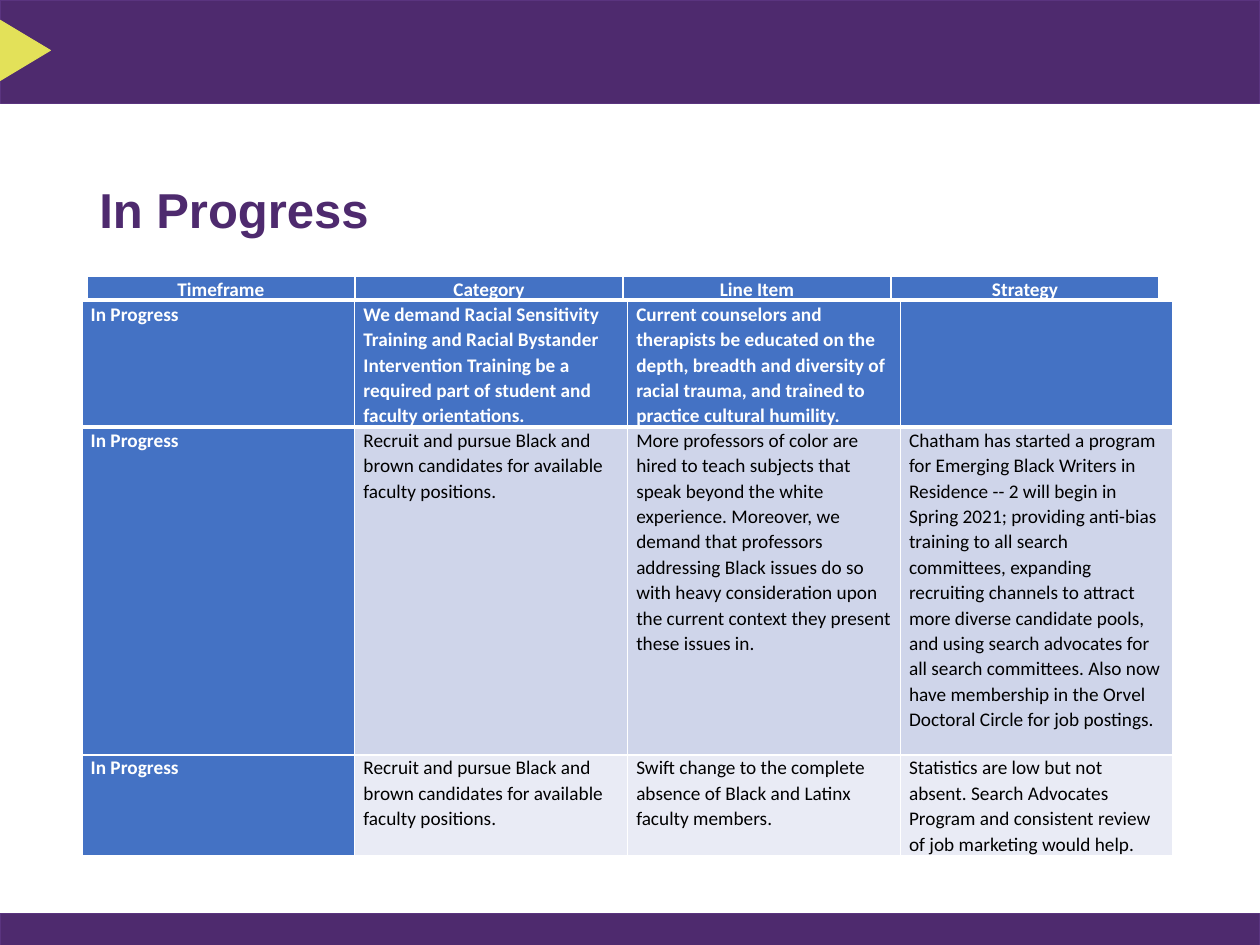
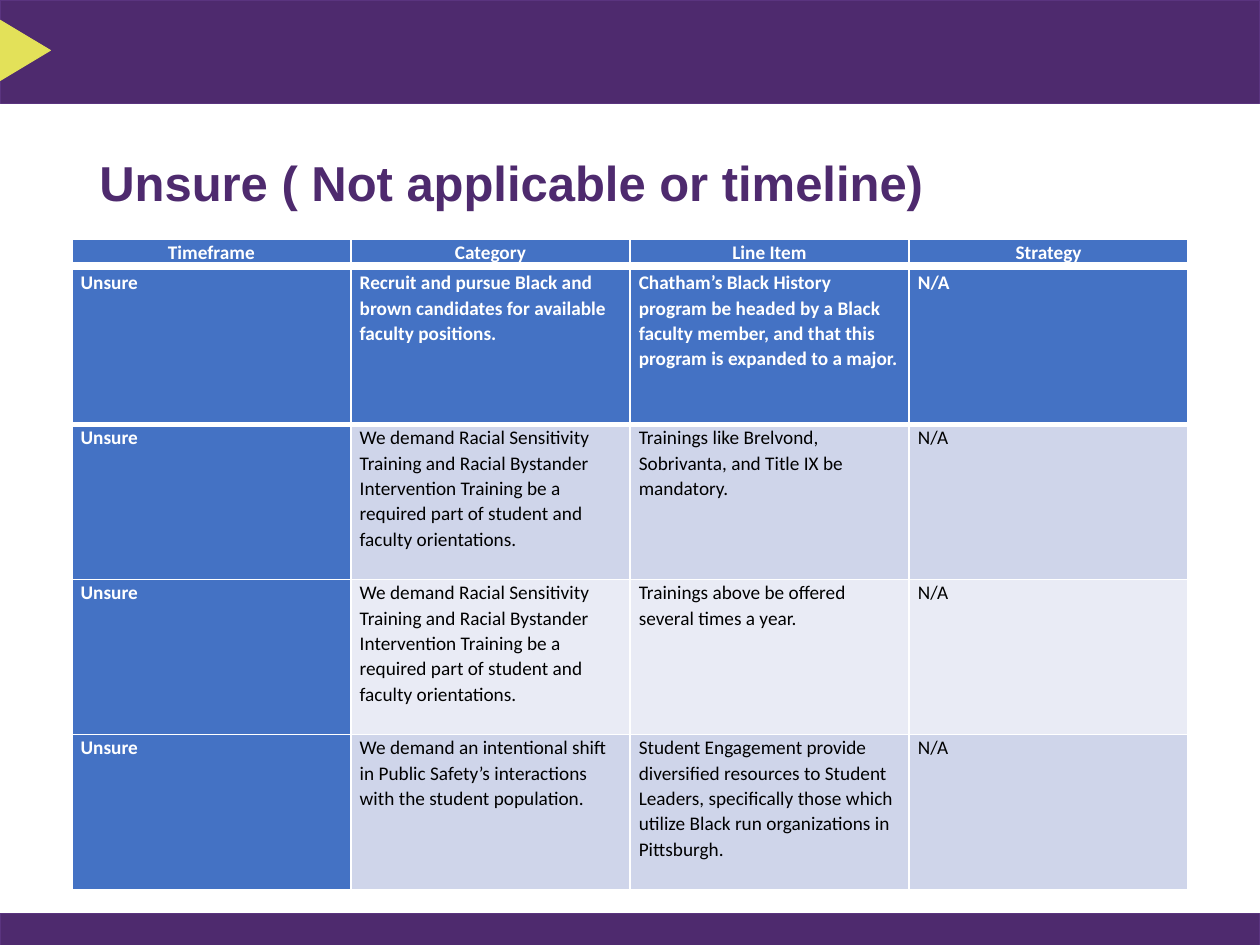
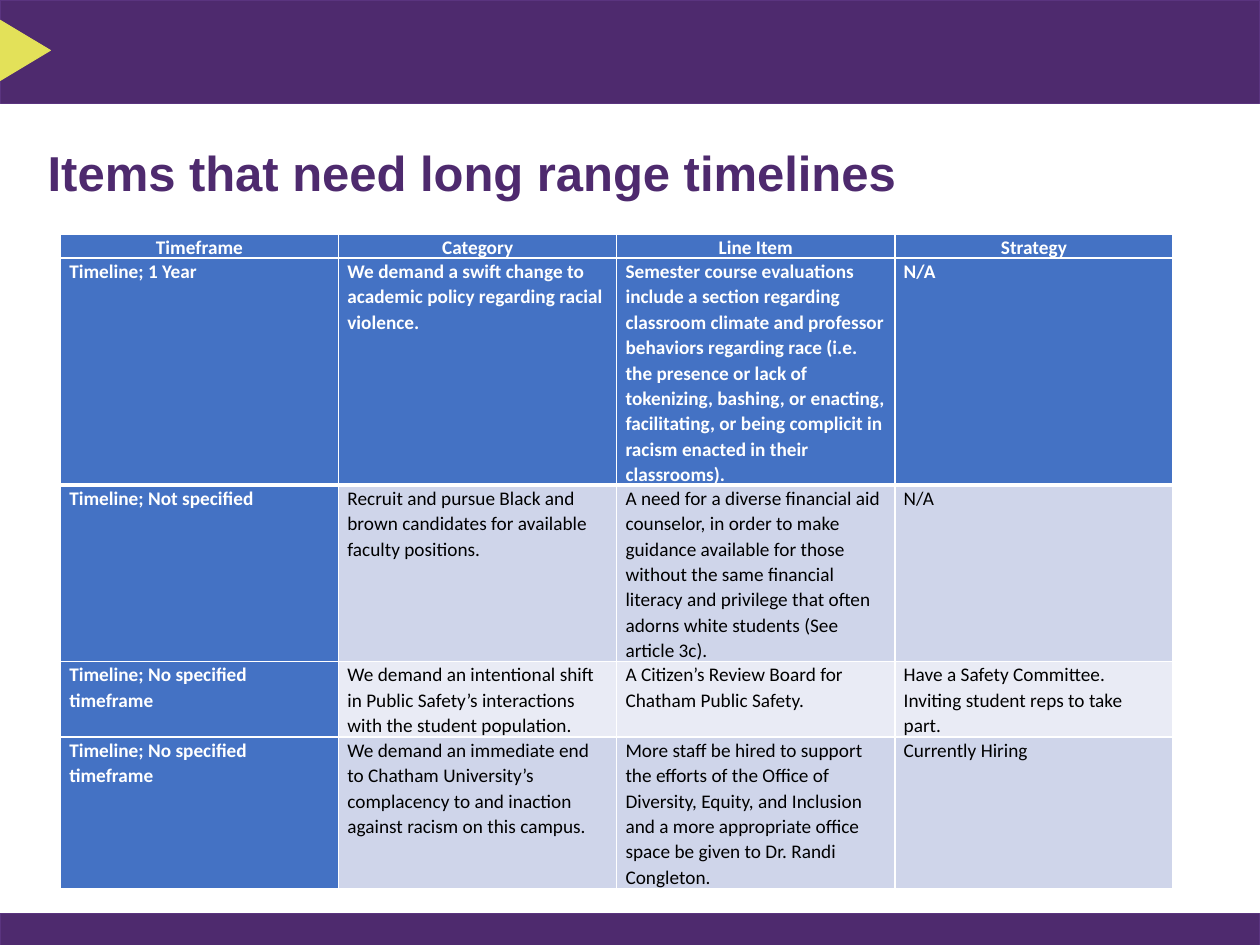
from lxml import etree
from pptx import Presentation
from pptx import util as u
from pptx.dml.color import RGBColor
from pptx.enum import shapes, text
from pptx.oxml.ns import qn

PURPLE = RGBColor(0x4E, 0x2A, 0x6E)
EDGE = RGBColor(0x5A, 0x34, 0x7F)
LIME = RGBColor(0xE3, 0xE1, 0x59)
BLUE = RGBColor(0x44, 0x72, 0xC4)
TINTS = RGBColor(0xCF, 0xD5, 0xEA), RGBColor(0xE9, 0xEB, 0xF5)
WHITE = RGBColor(0xFF, 0xFF, 0xFF)
BLACK = RGBColor(0, 0, 0)

WIDTH, HEIGHT = 10, 7.5
LINE = 0.2  # height of one line of table text
HEADS = ["Timeframe", "Category", "Line Item", "Strategy"]

RECRUIT = ("Recruit and pursue Black and brown candidates for available "
           "faculty positions.")
TRAIN = ("We demand Racial Sensitivity Training and Racial Bystander "
         "Intervention Training be a required part of student and faculty "
         "orientations.")
SAFETY = ("We demand an intentional shift in Public Safety’s interactions "
          "with the student population.")

PROGRESS = [
    ["In Progress", TRAIN,
     "Current counselors and therapists be educated on the depth, breadth and "
     "diversity of racial trauma, and trained to practice cultural humility.",
     ""],
    ["In Progress", RECRUIT,
     "More professors of color are hired to teach subjects that speak beyond "
     "the white experience. Moreover, we demand that professors addressing "
     "Black issues do so with heavy consideration upon the current context "
     "they present these issues in.",
     "Chatham has started a program for Emerging Black Writers in Residence "
     "-- 2 will begin in Spring 2021; providing anti-bias training to all "
     "search committees, expanding recruiting channels to attract more "
     "diverse candidate pools, and using search advocates for all search "
     "committees. Also now have membership in the Orvel Doctoral Circle for "
     "job postings."],
    ["In Progress", RECRUIT,
     "Swift change to the complete absence of Black and Latinx faculty "
     "members.",
     "Statistics are low but not absent. Search Advocates Program and "
     "consistent review of job marketing would help."],
]
UNSURE = [
    ["Unsure", RECRUIT,
     "Chatham’s Black History program be headed by a Black faculty member, "
     "and that this program is expanded to a major.", "N/A"],
    ["Unsure", TRAIN,
     "Trainings like Brelvond, Sobrivanta, and Title IX be mandatory.", "N/A"],
    ["Unsure", TRAIN,
     "Trainings above be offered several times a year.", "N/A"],
    ["Unsure", SAFETY,
     "Student Engagement provide diversified resources to Student Leaders, "
     "specifically those which utilize Black run organizations in "
     "Pittsburgh.", "N/A"],
]
LONG = [
    ["Timeline; 1 Year",
     "We demand a swift change to academic policy regarding racial violence.",
     "Semester course evaluations include a section regarding classroom "
     "climate and professor behaviors regarding race (i.e. the presence or "
     "lack of tokenizing, bashing, or enacting, facilitating, or being "
     "complicit in racism enacted in their classrooms).", "N/A"],
    ["Timeline; Not specified", RECRUIT,
     "A need for a diverse financial aid counselor, in order to make guidance "
     "available for those without the same financial literacy and privilege "
     "that often adorns white students (See article 3c).", "N/A"],
    ["Timeline; No specified timeframe", SAFETY,
     "A Citizen’s Review Board for Chatham Public Safety.",
     "Have a Safety Committee. Inviting student reps to take part."],
    ["Timeline; No specified timeframe",
     "We demand an immediate end to Chatham University’s complacency to and "
     "inaction against racism on this campus.",
     "More staff be hired to support the efforts of the Office of Diversity, "
     "Equity, and Inclusion and a more appropriate office space be given to "
     "Dr. Randi Congleton.", "Currently Hiring"],
]


def inches(*sizes):
    return [u.Inches(size) for size in sizes]


def add_block(slide, kind, place, fill, edge):
    block = slide.shapes.add_shape(kind, *inches(*place))
    block.shadow.inherit = False
    block.fill.solid()
    block.fill.fore_color.rgb = fill
    block.line.color.rgb = edge
    block.line.width = u.Pt(0.5)
    return block


def add_bands(slide):
    kind = shapes.MSO_SHAPE
    add_block(slide, kind.RECTANGLE, (0, 0, WIDTH, 0.82), PURPLE, EDGE)
    arrow = add_block(slide, kind.ISOSCELES_TRIANGLE,
                      (-0.04, 0.2, 0.48, 0.4), LIME, LIME)
    arrow.rotation = 90
    add_block(slide, kind.RECTANGLE, (0, HEIGHT - 0.25, WIDTH, 0.25),
              PURPLE, EDGE)


def add_run(para, words, font, size, color, bold=True):
    run = para.add_run()
    run.text = words
    run.font.name = font
    run.font.size = u.Pt(size)
    run.font.color.rgb = color
    run.font.bold = bold


def add_title(slide, words, place):
    frame = slide.shapes.add_textbox(*inches(*place)).text_frame
    frame.word_wrap = True
    frame.vertical_anchor = text.MSO_ANCHOR.MIDDLE
    para = frame.paragraphs[0]
    para.line_spacing = 0.9
    add_run(para, words, "Arial", 28, PURPLE)


def set_edges(cell, top, bottom):
    """Draw white cell borders; a width of 0 leaves that side alone."""
    props = cell._tc.get_or_add_tcPr()
    sides = {"L": 1, "R": 1, "T": top, "B": bottom}
    drawn = [(side, wide) for side, wide in sides.items() if wide]
    for spot, (side, wide) in enumerate(drawn):
        edge = etree.Element(qn(f"a:ln{side}"), w=str(u.Pt(wide)))
        fill = etree.SubElement(edge, qn("a:solidFill"))
        etree.SubElement(fill, qn("a:srgbClr"), val=str(WHITE))
        props.insert(spot, edge)


def fill_cell(cell, words, fill, color, bold, align):
    cell.fill.solid()
    cell.fill.fore_color.rgb = fill
    cell.margin_left = cell.margin_right = u.Inches(0.07)
    cell.margin_top = cell.margin_bottom = 0
    para = cell.text_frame.paragraphs[0]
    para.alignment = align
    para.line_spacing = 1.07
    if words:
        add_run(para, words, "Calibri", 11, color, bold)


def add_grid(slide, rows, place, tall, align=text.PP_ALIGN.LEFT):
    """Add a table at (left, top, width) with row heights in text lines."""
    left, top, width = place
    count = len(rows[0])
    frame = slide.shapes.add_table(
        len(rows), count, *inches(left, top, width, sum(tall) * LINE))
    grid = frame.table
    grid.first_row = grid.horz_banding = False
    for col in grid.columns:
        col.width = u.Inches(width / count)
    for r, row in enumerate(rows):
        grid.rows[r].height = u.Inches(tall[r] * LINE)
        for c, words in enumerate(row):
            strong = r == 0 or c == 0
            cell = grid.cell(r, c)
            fill_cell(cell, words, BLUE if strong else TINTS[(r - 1) % 2],
                      WHITE if strong else BLACK, strong, align)
            set_edges(cell, 0 if r else 1, 1 if r else 3)


def add_page(deck, title, spot, head, body, rows, tall):
    slide = deck.slides.add_slide(deck.slide_layouts[6])
    add_bands(slide)
    add_title(slide, title, spot)
    add_grid(slide, [HEADS], head, [0.95], text.PP_ALIGN.CENTER)
    add_grid(slide, rows, body, tall)


def main():
    deck = Presentation()
    deck.slide_width, deck.slide_height = inches(WIDTH, HEIGHT)
    add_page(deck, "In Progress", (0.69, 1.1, 8.86, 1.18),
             (0.69, 2.19, 8.51), (0.65, 2.39, 8.66), PROGRESS, [5, 13, 4])
    add_page(deck, "Unsure ( Not applicable or timeline)",
             (0.69, 1.1, 6.82, 0.74),
             (0.57, 1.9, 8.86), (0.57, 2.14, 8.86), UNSURE, [6.15] * 4)
    add_page(deck, "Items that need long range timelines",
             (0.28, 0.92, 7.08, 0.94),
             (0.48, 1.86, 8.83), (0.48, 2.05, 8.83), LONG, [9, 7, 3, 6])
    deck.save("out.pptx")


if __name__ == "__main__":
    main()
